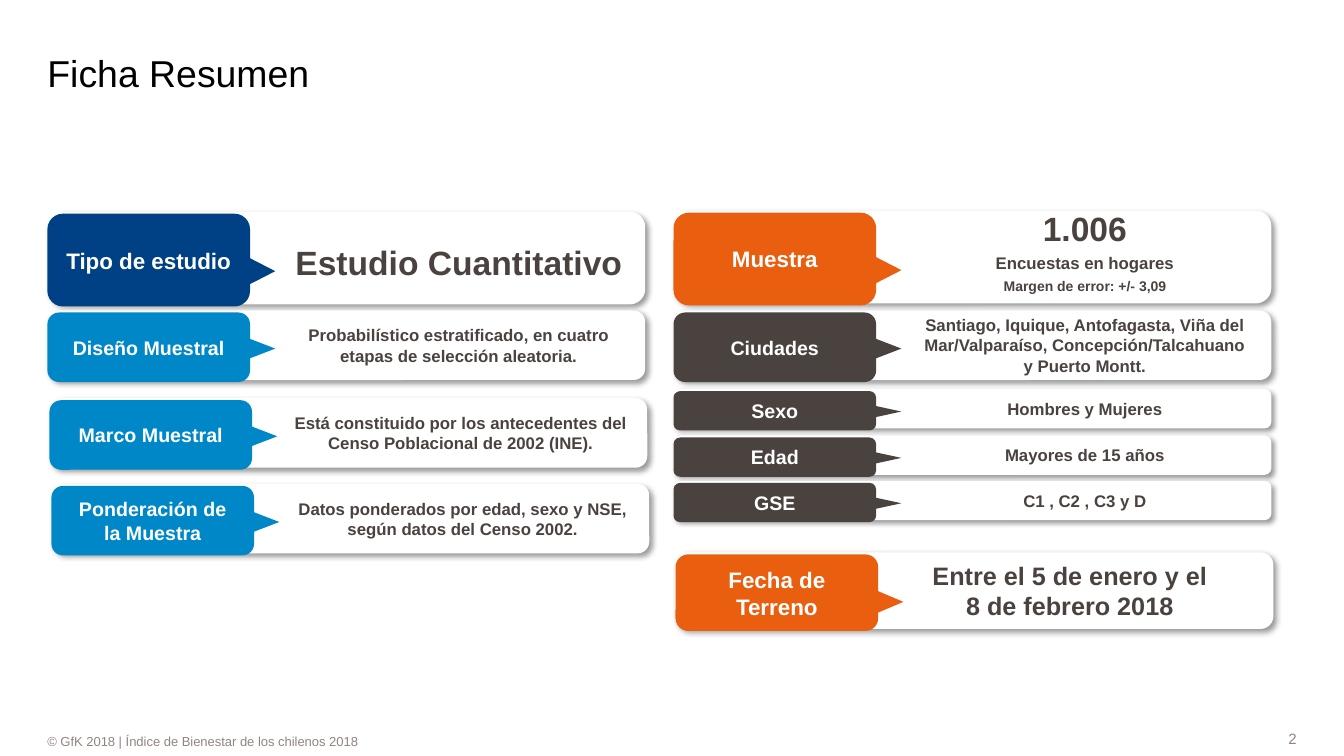
"""Build the study summary slide with its labelled cards."""
from dataclasses import dataclass

from lxml.etree import SubElement
from pptx import Presentation
from pptx.dml.color import RGBColor
from pptx.enum.shapes import MSO_SHAPE as Shape
from pptx.enum.text import MSO_ANCHOR as Anchor, PP_ALIGN as Align
from pptx.oxml.ns import qn
from pptx.util import Inches, Pt

NAVY, BLUE, ORANGE, BROWN = "004186", "0087C8", "E95E0F", "4A423F"
WHITE, BLACK, GREY = "FFFFFF", "000000", "928580"
CARD_WIDTH, LABEL_WIDTH, LABEL_DROP = 5.93, 2.01, 0.02
POINTER_LENGTH, POINTER_CENTRE = 0.26, 2.13
DETAIL_CENTRE = 4.08
LEFT, RIGHT = 0.47, 6.68


@dataclass(frozen=True)
class Card:
    left: float
    top: float
    height: float
    color: str
    label: str
    detail: str
    detail_sizes: tuple[float, ...] = (12,)
    label_size: float = 14
    pointer_level: float = 0.52
    detail_shift: float = 0
    detail_width: float = 3.48
    detail_centre: float = DETAIL_CENTRE


CARDS = [
    Card(RIGHT, 2.09, 0.92, ORANGE, "Muestra",
         "1.006\nEncuestas en hogares\nMargen de error: +/- 3,09",
         (24, 12, 10), 16, 0.62, -0.06),
    Card(RIGHT, 3.08, 0.69, BROWN, "Ciudades",
         "Santiago, Iquique, Antofagasta, Viña del "
         "Mar/Valparaíso, Concepción/Talcahuano\vy Puerto Montt."),
    Card(RIGHT, 3.86, 0.39, BROWN, "Sexo", "Hombres y Mujeres"),
    Card(RIGHT, 4.32, 0.39, BROWN, "Edad", "Mayores de 15 años"),
    Card(RIGHT, 4.77, 0.39, BROWN, "GSE", "C1 , C2 , C3 y D"),
    Card(RIGHT + 0.02, 5.48, 0.76, ORANGE, "Fecha de Terreno",
         "Entre el 5 de enero y el 8 de febrero 2018",
         (18,), 16, 0.62, 0, 2.74, 3.91),
    Card(LEFT, 2.1, 0.92, NAVY, "Tipo de estudio", "Estudio Cuantitativo",
         (24,), 16, 0.62, 0.04),
    Card(LEFT, 3.08, 0.69, BLUE, "Diseño Muestral",
         "Probabilístico estratificado, en cuatro etapas de selección aleatoria."),
    Card(LEFT + 0.02, 3.95, 0.69, BLUE, "Marco Muestral",
         "Está constituido por los antecedentes del "
         "Censo Poblacional de 2002 (INE)."),
    Card(LEFT + 0.04, 4.8, 0.69, BLUE, "Ponderación de\vla Muestra",
         "Datos ponderados por edad, sexo y NSE, según datos del Censo 2002."),
]


def rgb(color: str) -> RGBColor:
    return RGBColor.from_string(color)


def write(frame, text: str, sizes: tuple[float, ...], color: str,
          align=Align.CENTER, bold: bool = True) -> None:
    frame.text = text
    frame.word_wrap = True
    frame.vertical_anchor = Anchor.MIDDLE
    for index, (paragraph, size) in enumerate(zip(frame.paragraphs, sizes)):
        paragraph.alignment = align
        if index:
            paragraph.space_before = Pt(3)
        for run in paragraph.runs:
            run.font.name = "Arial"
            run.font.size = Pt(size)
            run.font.bold = bold
            run.font.color.rgb = rgb(color)
        for line_break in paragraph._p.findall(qn("a:br")):
            SubElement(line_break, qn("a:rPr"), sz=str(int(size * 100)))


def clear_margins(frame) -> None:
    frame.margin_left = frame.margin_right = 0
    frame.margin_top = frame.margin_bottom = 0


def add_block(shapes, preset, left: float, top: float, width: float,
              height: float, color: str):
    block = shapes.add_shape(preset, Inches(left), Inches(top),
                             Inches(width), Inches(height))
    block.shadow.inherit = False
    block.fill.solid()
    block.fill.fore_color.rgb = rgb(color)
    block.line.fill.background()
    return block


def add_text(shapes, left: float, top: float, width: float, height: float,
             text: str, sizes: tuple[float, ...], color: str,
             align=Align.CENTER, bold: bool = True) -> None:
    box = shapes.add_textbox(Inches(left), Inches(top),
                             Inches(width), Inches(height))
    clear_margins(box.text_frame)
    write(box.text_frame, text, sizes, color, align, bold)


def cast_shadow(block) -> None:
    effects = block._element.spPr.find(qn("a:effectLst"))
    shadow = SubElement(effects, qn("a:outerShdw"), blurRad=str(Pt(4)),
                        dist=str(Pt(3)), dir="2700000", algn="tl",
                        rotWithShape="0")
    tint = SubElement(shadow, qn("a:srgbClr"), val=BLACK)
    SubElement(tint, qn("a:alpha"), val="40000")


def add_card(slide, card: Card) -> None:
    shapes = slide.shapes.add_group_shape().shapes
    panel = add_block(shapes, Shape.ROUNDED_RECTANGLE, card.left, card.top,
                      CARD_WIDTH, card.height, WHITE)
    cast_shadow(panel)

    label_top = card.top + LABEL_DROP
    label = add_block(shapes, Shape.ROUNDED_RECTANGLE, card.left, label_top,
                      LABEL_WIDTH, card.height, card.color)
    write(label.text_frame, card.label, (card.label_size,), WHITE)

    pointer_base = card.height * 0.29
    pointer = add_block(
        shapes, Shape.ISOSCELES_TRIANGLE,
        card.left + POINTER_CENTRE - pointer_base / 2,
        label_top + card.height * card.pointer_level - POINTER_LENGTH / 2,
        pointer_base, POINTER_LENGTH, card.color)
    pointer.rotation = 90

    add_text(shapes, card.left + card.detail_centre - card.detail_width / 2,
             card.top + card.detail_shift, card.detail_width, card.height,
             card.detail, card.detail_sizes, BROWN)


def main() -> None:
    deck = Presentation()
    deck.slide_width, deck.slide_height = Inches(13.33), Inches(7.5)
    slide = deck.slides.add_slide(deck.slide_layouts[5])

    title = slide.shapes.title
    title.left, title.top = Inches(LEFT), Inches(0.28)
    title.width, title.height = Inches(9.34), Inches(0.84)
    clear_margins(title.text_frame)
    title.text_frame.margin_top = Inches(0.03)
    write(title.text_frame, "Ficha Resumen", (26.7,), BLACK, Align.LEFT, False)

    for card in CARDS:
        add_card(slide, card)

    add_text(slide.shapes, LEFT, 7.25, 10.29, 0.21,
             "© GfK 2018 | Índice de Bienestar de los chilenos 2018",
             (9.3,), GREY, Align.LEFT, False)
    add_text(slide.shapes, 10.97, 7.22, 1.89, 0.21, "2",
             (10.7,), GREY, Align.RIGHT, False)
    deck.save("out.pptx")


if __name__ == "__main__":
    main()
